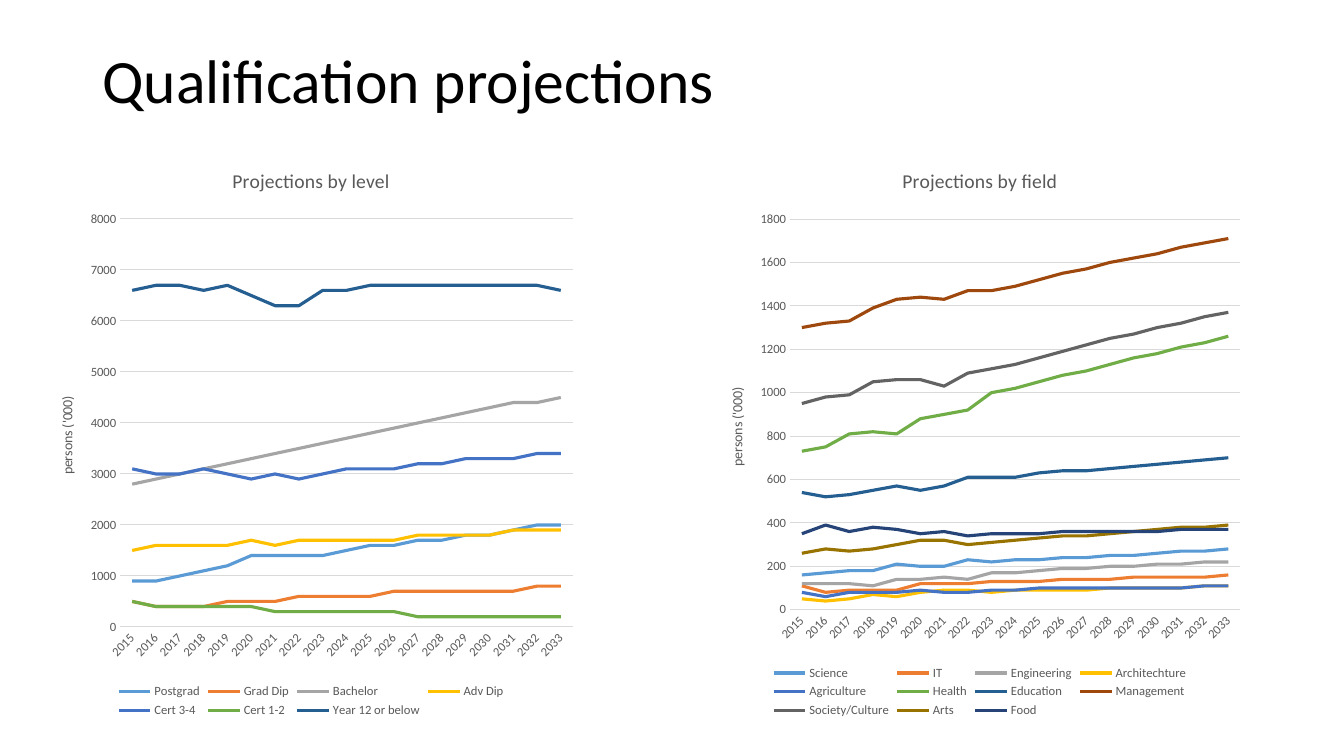
from lxml import etree
from pptx import Presentation
from pptx.chart import data as chart_data
from pptx.dml.color import RGBColor
from pptx.enum import chart as chart_enum, text
from pptx.oxml.ns import qn
from pptx.util import Cm, Pt

FONT = "Calibri"
BLACK = RGBColor(0x00, 0x00, 0x00)
GREY_TEXT = RGBColor(0x59, 0x59, 0x59)
GRID_GREY = RGBColor(0xD9, 0xD9, 0xD9)
SERIES_COLORS = [RGBColor.from_string(code) for code in (
    "5B9BD5", "ED7D31", "A5A5A5", "FFC000", "4472C4", "70AD47",
    "255E91", "9E480E", "636363", "997300", "264478")]

YEARS = [str(year) for year in range(2015, 2034)]
LEVELS = {
    "Postgrad": [900, 900, 1000, 1100, 1200, 1400, 1400, 1400, 1400, 1500,
                 1600, 1600, 1700, 1700, 1800, 1800, 1900, 2000, 2000],
    "Grad Dip": [500, 400, 400, 400, 500, 500, 500, 600, 600, 600,
                 600, 700, 700, 700, 700, 700, 700, 800, 800],
    "Bachelor": [2800, 2900, 3000, 3100, 3200, 3300, 3400, 3500, 3600, 3700,
                 3800, 3900, 4000, 4100, 4200, 4300, 4400, 4400, 4500],
    "Adv Dip": [1500, 1600, 1600, 1600, 1600, 1700, 1600, 1700, 1700, 1700,
                1700, 1700, 1800, 1800, 1800, 1800, 1900, 1900, 1900],
    "Cert 3-4": [3100, 3000, 3000, 3100, 3000, 2900, 3000, 2900, 3000, 3100,
                 3100, 3100, 3200, 3200, 3300, 3300, 3300, 3400, 3400],
    "Cert 1-2": [500, 400, 400, 400, 400, 400, 300, 300, 300, 300,
                 300, 300, 200, 200, 200, 200, 200, 200, 200],
    "Year 12 or below": [6600, 6700, 6700, 6600, 6700, 6500, 6300, 6300, 6600, 6600,
                         6700, 6700, 6700, 6700, 6700, 6700, 6700, 6700, 6600],
}
FIELDS = {
    "Science": [160, 170, 180, 180, 210, 200, 200, 230, 220, 230,
                230, 240, 240, 250, 250, 260, 270, 270, 280],
    "IT": [110, 80, 90, 90, 90, 120, 120, 120, 130, 130,
           130, 140, 140, 140, 150, 150, 150, 150, 160],
    "Engineering": [120, 120, 120, 110, 140, 140, 150, 140, 170, 170,
                    180, 190, 190, 200, 200, 210, 210, 220, 220],
    "Architechture": [50, 40, 50, 70, 60, 80, 90, 90, 80, 90,
                      90, 90, 90, 100, 100, 100, 100, 110, 110],
    "Agriculture": [80, 60, 80, 80, 80, 90, 80, 80, 90, 90,
                    100, 100, 100, 100, 100, 100, 100, 110, 110],
    "Health": [730, 750, 810, 820, 810, 880, 900, 920, 1000, 1020,
               1050, 1080, 1100, 1130, 1160, 1180, 1210, 1230, 1260],
    "Education": [540, 520, 530, 550, 570, 550, 570, 610, 610, 610,
                  630, 640, 640, 650, 660, 670, 680, 690, 700],
    "Management": [1300, 1320, 1330, 1390, 1430, 1440, 1430, 1470, 1470, 1490,
                   1520, 1550, 1570, 1600, 1620, 1640, 1670, 1690, 1710],
    "Society/Culture": [950, 980, 990, 1050, 1060, 1060, 1030, 1090, 1110, 1130,
                        1160, 1190, 1220, 1250, 1270, 1300, 1320, 1350, 1370],
    "Arts": [260, 280, 270, 280, 300, 320, 320, 300, 310, 320,
             330, 340, 340, 350, 360, 370, 380, 380, 390],
    "Food": [350, 390, 360, 380, 370, 350, 360, 340, 350, 350,
             350, 360, 360, 360, 360, 360, 370, 370, 370],
}


def style_font(font, size, color=GREY_TEXT):
    font.name, font.size, font.bold = FONT, Pt(size), False
    font.color.rgb = color


def set_chart_text(text_frame, wording, size):
    text_frame.text = wording
    style_font(text_frame.paragraphs[0].runs[0].font, size)


def rotate_text(body, degrees):
    body.set("rot", str(degrees * 60000))
    body.set("vert", "horz")


def fix_plot_area(chart, x, y, w, h):
    """Place the inner plot area as fractions of the chart."""
    plot_area = chart._chartSpace.chart.plotArea
    for old_layout in plot_area.findall(qn("c:layout")):
        plot_area.remove(old_layout)
    layout = etree.Element(qn("c:layout"))
    manual = etree.SubElement(layout, qn("c:manualLayout"))
    for tag, value in (("layoutTarget", "inner"), ("xMode", "edge"), ("yMode", "edge"),
                       ("x", x), ("y", y), ("w", w), ("h", h)):
        etree.SubElement(manual, qn("c:" + tag)).set("val", str(value))
    plot_area.insert(0, layout)


def add_title(slide, left, top, width, height):
    title = slide.shapes.add_textbox(left, top, width, height)
    frame = title.text_frame
    frame.word_wrap = True
    frame.vertical_anchor = text.MSO_ANCHOR.MIDDLE
    frame.text = "Qualification projections"
    paragraph = frame.paragraphs[0]
    paragraph.line_spacing = 0.9
    style_font(paragraph.runs[0].font, 44, BLACK)


def add_projection_chart(slide, box, heading, series_values, axis_max, axis_step, plot_height):
    data = chart_data.CategoryChartData()
    data.categories = YEARS
    for name, values in series_values.items():
        data.add_series(name, values)
    chart = slide.shapes.add_chart(chart_enum.XL_CHART_TYPE.LINE, *box, data).chart
    style_font(chart.font, 10, BLACK)
    chart.has_title = True
    set_chart_text(chart.chart_title.text_frame, heading, 14)

    # Lines
    for series, color in zip(chart.plots[0].series, SERIES_COLORS):
        series.smooth = False
        series.marker.style = chart_enum.XL_MARKER_STYLE.NONE
        series.format.line.color.rgb = color
        series.format.line.width = Pt(2.25)
    chart.plots[0].vary_by_categories = False

    # Axes
    years, persons = chart.category_axis, chart.value_axis
    for axis in (years, persons):
        axis.major_tick_mark = axis.minor_tick_mark = chart_enum.XL_TICK_MARK.NONE
        style_font(axis.tick_labels.font, 9)
    rotate_text(years._element.find(qn("c:txPr")).find(qn("a:bodyPr")), -45)
    persons.minimum_scale, persons.maximum_scale = 0, axis_max
    persons.major_unit = axis_step
    persons.format.line.fill.background()
    persons.has_major_gridlines = True
    for line in (years.format.line, persons.major_gridlines.format.line):
        line.color.rgb = GRID_GREY
        line.width = Pt(0.75)
    caption = persons.axis_title.text_frame
    set_chart_text(caption, "persons ('000)", 10)
    rotate_text(caption._txBody.find(qn("a:bodyPr")), -90)

    # Legend and plot area
    chart.has_legend = True
    chart.legend.position = chart_enum.XL_LEGEND_POSITION.BOTTOM
    chart.legend.include_in_layout = False
    style_font(chart.legend.font, 9)
    fix_plot_area(chart, 0.15, 0.125, 0.83, plot_height)


def main():
    presentation = Presentation()
    presentation.slide_width, presentation.slide_height = Cm(33.87), Cm(19.05)
    slide = presentation.slides.add_slide(presentation.slide_layouts[6])
    add_title(slide, Cm(2.33), Cm(1.01), Cm(29.21), Cm(2.21))
    top, height = Cm(3.71), Cm(14.48)
    add_projection_chart(slide, (Cm(0.97), top, Cm(13.74), height),
                         "Projections by level", LEVELS, 8000, 1000, 0.71)
    add_projection_chart(slide, (Cm(17.86), top, Cm(13.67), height),
                         "Projections by field", FIELDS, 1800, 200, 0.68)
    presentation.save("out.pptx")


if __name__ == "__main__":
    main()
